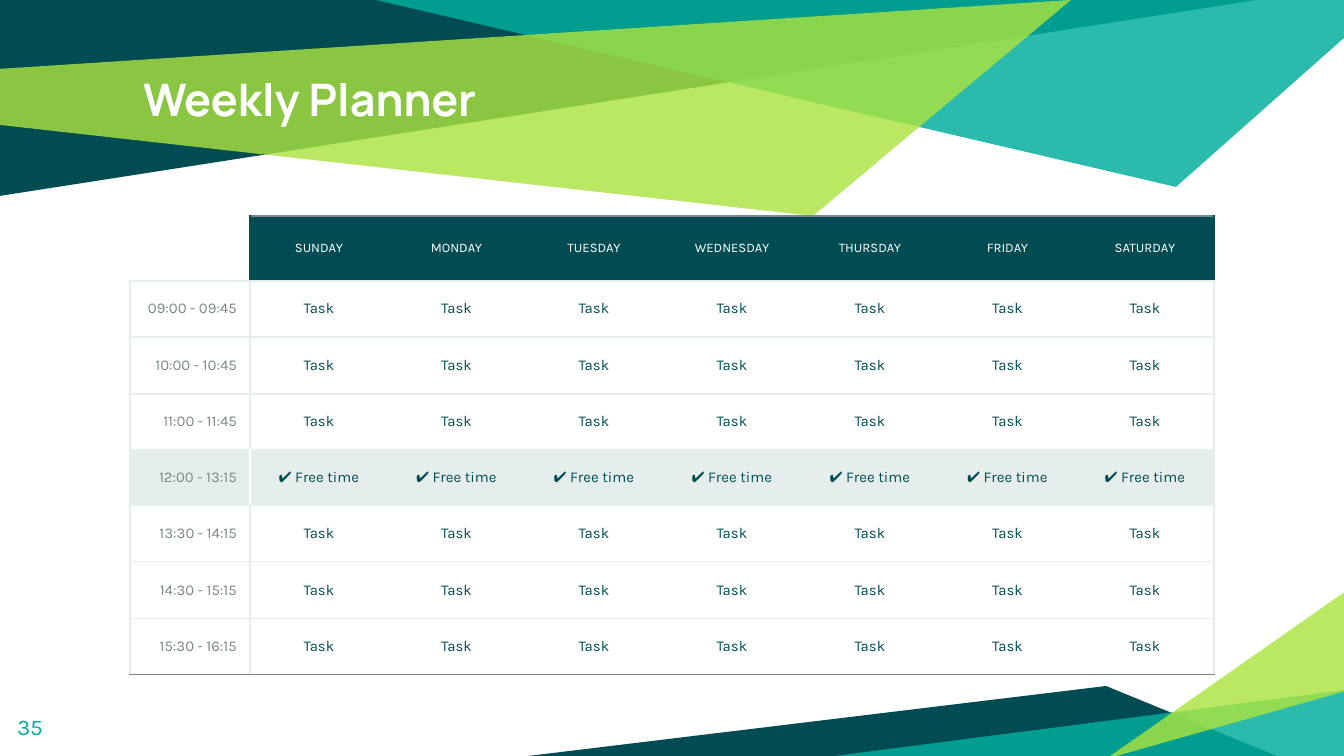
from lxml import etree
from pptx import Presentation
from pptx.dml.color import RGBColor
from pptx.enum.text import MSO_ANCHOR, PP_ALIGN
from pptx.oxml.ns import qn
from pptx.util import Pt

TOP, MIDDLE = MSO_ANCHOR.TOP, MSO_ANCHOR.MIDDLE
LEFT, CENTER, RIGHT = PP_ALIGN.LEFT, PP_ALIGN.CENTER, PP_ALIGN.RIGHT

EMU_PER_PX = 914400 / 134.4
INSET = 13
THEME = {
    "dark": "004C52", "teal": "00AE9D", "lime": "ABE33F",
    "gray": "788788", "pale": "E6EEED", "white": "FFFFFF",
    "heading_font": "Manrope", "body_font": "Karla",
    "title_size": 24, "page_size": 12, "day_size": 7, "task_size": 8,
    "border_width": 0.75,
}


def px(length):
    return round(length * EMU_PER_PX)


def write(frame, text, size, color, align, anchor, font="body_font", bold=False):
    """Put one formatted paragraph into a text frame or table cell."""
    for side in ("left", "right", "top", "bottom"):
        setattr(frame, f"margin_{side}", px(INSET))
    frame.vertical_anchor = anchor
    frame.text = text
    paragraph = getattr(frame, "text_frame", frame).paragraphs[0]
    paragraph.alignment = align
    formats = {"name": THEME[font], "size": Pt(THEME[size]), "bold": bold}
    for target in (paragraph.font, *(run.font for run in paragraph.runs)):
        for attribute, value in formats.items():
            setattr(target, attribute, value)
        target.color.rgb = RGBColor.from_string(THEME[color])


prs = Presentation()
prs.slide_width, prs.slide_height = px(1344), px(756)
slide = prs.slides.add_slide(prs.slide_layouts[5])

# Overlapping ribbons: colour, opacity in percent, corners
ribbons = [
    ("dark", 100, [(0, 0), (0, 196), (1257, 0)]),
    ("teal", 83, [(376, 0), (1176, 187), (1344, 38), (1344, 0)]),
    ("lime", 81, [(-1, 69), (0, 125), (813, 216), (1071, 0)]),
    ("dark", 100, [(528, 756), (1277, 756), (1106, 686)]),
    ("teal", 83, [(1346, 690), (1346, 759), (812, 759)]),
    ("lime", 81, [(1346, 691), (1346, 591), (1106, 759)]),
]
for color, opacity, corners in ribbons:
    outline = slide.shapes.build_freeform(*corners[0], scale=EMU_PER_PX)
    outline.add_line_segments(corners[1:], close=True)
    ribbon = outline.convert_to_shape()
    ribbon.shadow.inherit = False
    ribbon.line.fill.background()
    ribbon.fill.solid()
    ribbon.fill.fore_color.rgb = RGBColor.from_string(THEME[color])
    if opacity < 100:
        rgb = ribbon.fill._xPr.find(".//" + qn("a:srgbClr"))
        etree.SubElement(rgb, qn("a:alpha"), val=str(opacity * 1000))

# Title, brought in front of the ribbons
title = slide.shapes.title
title.left, title.top, title.width, title.height = map(px, (130, 59, 1083, 126))
write(title.text_frame, "Weekly Planner", "title_size", "white", LEFT, TOP,
      font="heading_font", bold=True)
title.text_frame.word_wrap = True
slide.shapes._spTree.append(title._element)

# Page number
page = slide.shapes.add_textbox(*map(px, (4, 698, 81, 58))).text_frame
page.word_wrap = True
write(page, "35", "page_size", "teal", LEFT, MIDDLE)

# Planner content
days = ["SUNDAY", "MONDAY", "TUESDAY", "WEDNESDAY", "THURSDAY", "FRIDAY", "SATURDAY"]
hours = ["09:00 - 09:45", "10:00 - 10:45", "11:00 - 11:45", "12:00 - 13:15",
         "13:30 - 14:15", "14:30 - 15:15", "15:30 - 16:15"]
FREE_ROW = 4
last_row, last_col = len(hours), len(days)

# Planner grid: equal columns and rows after the hour column and day row
col_edges = [130] + [250 + round(i * 964 / last_col) for i in range(last_col + 1)]
row_edges = [216] + [281 + round(i * 394 / last_row) for i in range(last_row + 1)]
planner = slide.shapes.add_table(
    last_row + 1, last_col + 1, px(130), px(216), px(1084), px(459)).table
planner.first_row = planner.horz_banding = False
for column, start, end in zip(planner.columns, col_edges, col_edges[1:]):
    column.width = px(end - start)
for row, start, end in zip(planner.rows, row_edges, row_edges[1:]):
    row.height = px(end - start)

for r in range(last_row + 1):
    for c in range(last_col + 1):
        cell = planner.cell(r, c)
        is_header, is_hour, is_free = r == 0, c == 0, r == FREE_ROW

        # Text and fill by the role of the cell
        fill = "pale" if is_free else None
        if is_header and is_hour:
            write(cell, "", "day_size", "white", CENTER, MIDDLE)
        elif is_header:
            write(cell, days[c - 1], "day_size", "white", CENTER, MIDDLE)
            fill = "dark"
        elif is_hour:
            write(cell, hours[r - 1], "task_size", "gray", RIGHT, MIDDLE)
        else:
            task = "✔ Free time" if is_free else "Task"
            write(cell, task, "task_size", "dark", CENTER, MIDDLE)

        # Borders: rules between rows, verticals only round hours and days
        side = "dark" if is_header else "pale"
        divider = "white" if is_free else side
        top = "pale"
        if is_header:
            top = None if is_hour else "gray"
        borders = {
            "lnL": {0: None if is_header else side, 1: divider}.get(c),
            "lnR": {0: divider, last_col: side}.get(c),
            "lnT": top,
            "lnB": "gray" if r == last_row else "pale",
        }
        properties = cell._tc.get_or_add_tcPr()
        for tag, color in borders.items():
            line = etree.SubElement(properties, qn(f"a:{tag}"),
                                    w=str(Pt(THEME["border_width"])))
            if color:
                solid = etree.SubElement(line, qn("a:solidFill"))
                etree.SubElement(solid, qn("a:srgbClr"), val=THEME[color])
            else:
                etree.SubElement(line, qn("a:noFill"))

        if fill:
            cell.fill.solid()
            cell.fill.fore_color.rgb = RGBColor.from_string(THEME[fill])
        else:
            cell.fill.background()

prs.save("out.pptx")
